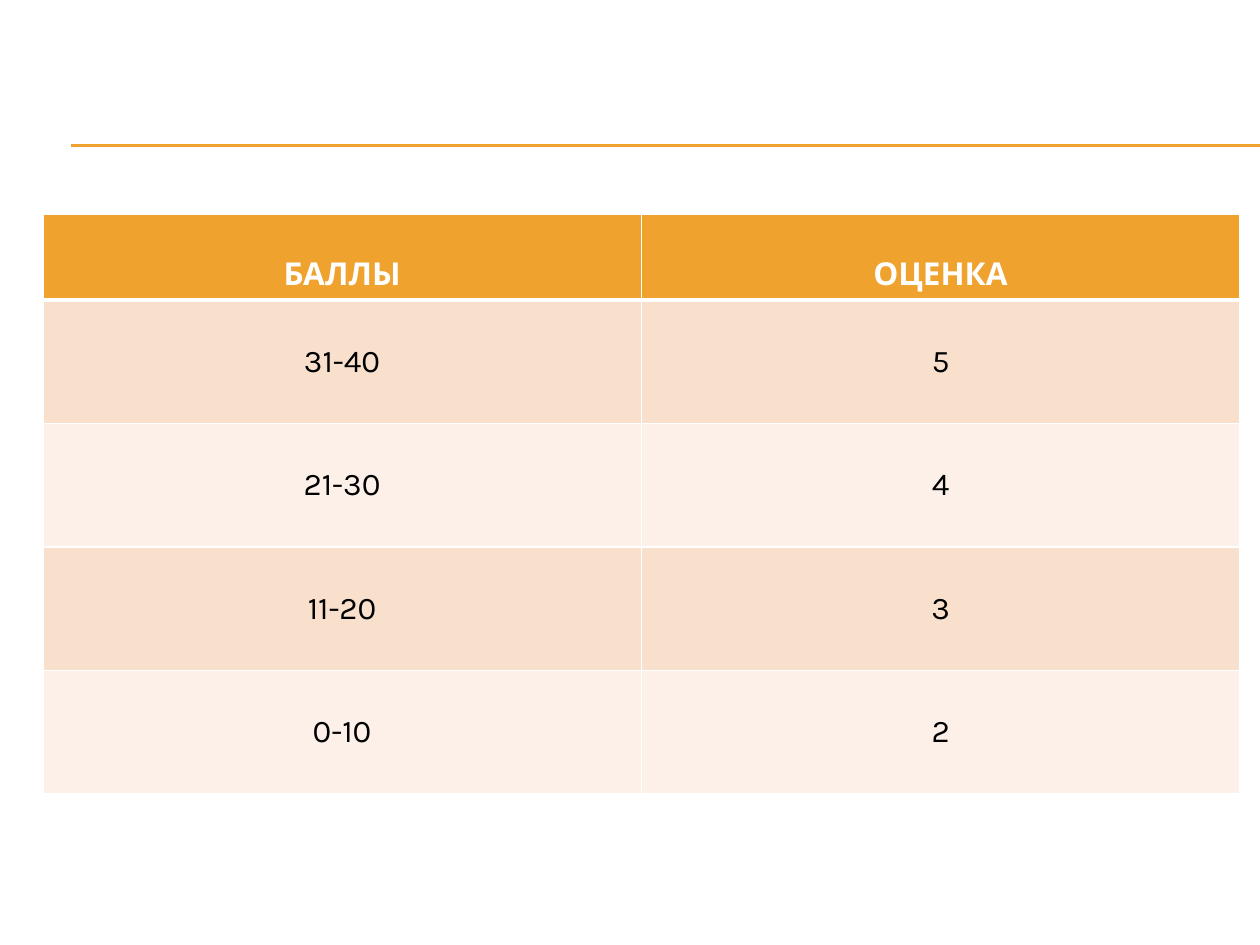
from lxml import etree
from pptx import Presentation
from pptx import util as u
from pptx.dml.color import RGBColor
from pptx.enum import shapes, text
from pptx.oxml import ns

ACCENT = "F0A22E"
WHITE = "FFFFFF"
BLACK = "000000"
BANDS = ("F9E0CD", "FCF0E8")
HEADER = ("БАЛЛЫ", "ОЦЕНКА")
GRADES = (("31-40", "5"), ("21-30", "4"), ("11-20", "3"), ("0-10", "2"))


def color(value):
    return RGBColor.from_string(value)


class SlideBuilder:
    font = "Karla"
    size = 18

    def __init__(self, slide):
        self.slide = slide

    def rule(self, left, right, top):
        connector = self.slide.shapes.add_connector(
            shapes.MSO_CONNECTOR.STRAIGHT,
            u.Inches(left), u.Inches(top), u.Inches(right), u.Inches(top))
        connector.line.color.rgb = color(ACCENT)
        connector.line.width = u.Pt(0.75)
        etree.SubElement(connector._element.spPr, ns.qn("a:effectLst"))

    def borders(self, cell, bottom):
        properties = cell._tc.get_or_add_tcPr()
        widths = {"lnL": 1, "lnR": 1, "lnT": 1, "lnB": bottom}
        for index, (side, width) in enumerate(widths.items()):
            line = etree.Element(ns.qn(f"a:{side}"), w=str(u.Pt(width)))
            fill = etree.SubElement(line, ns.qn("a:solidFill"))
            etree.SubElement(fill, ns.qn("a:srgbClr"), val=WHITE)
            properties.insert(index, line)

    def cell(self, cell, wording, fill, header):
        cell.fill.solid()
        cell.fill.fore_color.rgb = color(fill)
        anchors = text.MSO_ANCHOR
        cell.vertical_anchor = anchors.BOTTOM if header else anchors.MIDDLE
        paragraph = cell.text_frame.paragraphs[0]
        paragraph.alignment = text.PP_ALIGN.CENTER
        run = paragraph.add_run()
        run.text = wording
        run.font.name = self.font
        run.font.size = u.Pt(self.size)
        run.font.bold = header
        run.font.color.rgb = color(WHITE if header else BLACK)
        self.borders(cell, 3 if header else 1)

    def table(self, left, top, width, header_height, row_height, rows):
        height = header_height + row_height * (len(rows) - 1)
        table = self.slide.shapes.add_table(
            len(rows), len(rows[0]), u.Inches(left), u.Inches(top),
            u.Inches(width), u.Inches(height)).table
        for index, values in enumerate(rows):
            header = index == 0
            table.rows[index].height = u.Inches(
                header_height if header else row_height)
            fill = ACCENT if header else BANDS[(index - 1) % 2]
            for column, wording in enumerate(values):
                self.cell(table.cell(index, column), wording, fill, header)


def main():
    presentation = Presentation()
    presentation.slide_width = u.Inches(10)
    presentation.slide_height = u.Inches(7.5)
    slide = presentation.slides.add_slide(presentation.slide_layouts[6])
    builder = SlideBuilder(slide)
    for top in (1.15, 1.16):
        builder.rule(0.56, 10, top)
    builder.table(0.34, 1.7, 9.5, 0.68, 0.98, (HEADER, *GRADES))
    presentation.save("out.pptx")


if __name__ == "__main__":
    main()
